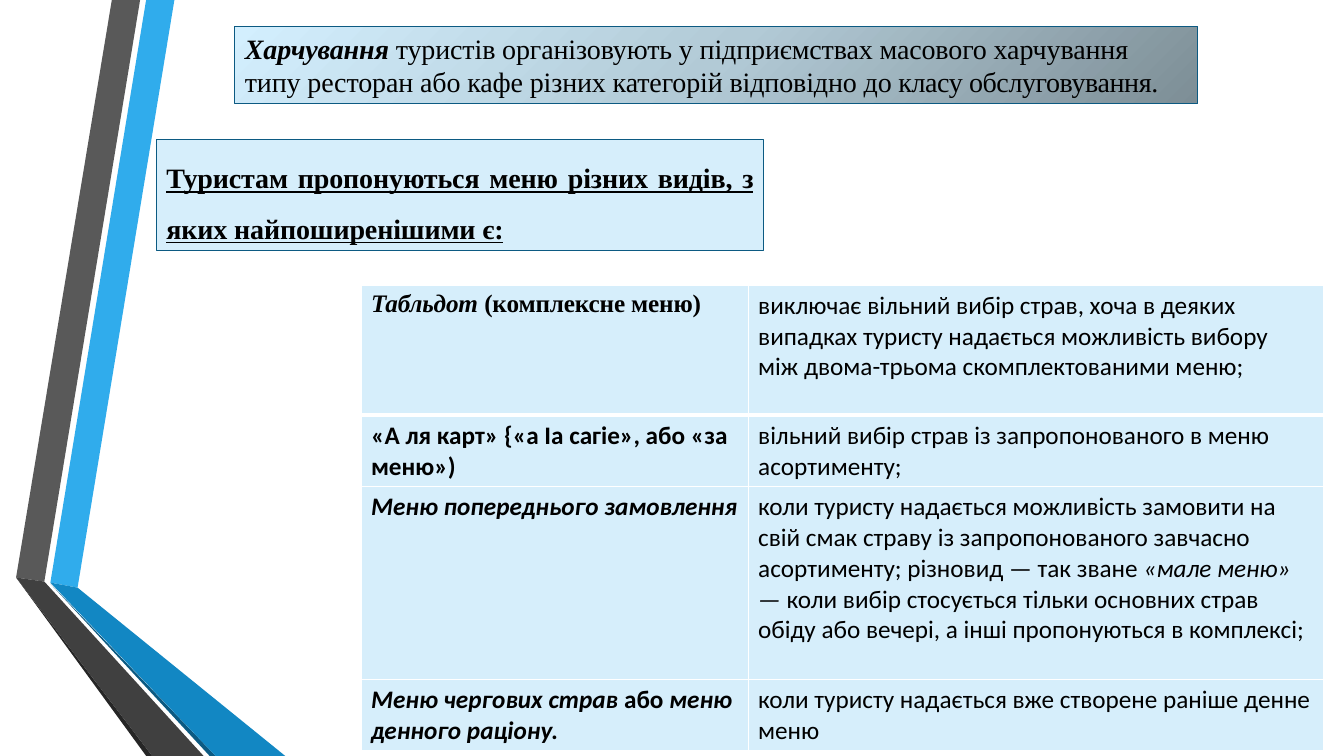
from lxml import etree
from pptx import Presentation
from pptx.dml.color import RGBColor
from pptx.enum.shapes import MSO_SHAPE
from pptx.enum.text import MSO_ANCHOR, PP_ALIGN
from pptx.oxml import parse_xml
from pptx.oxml.ns import qn
from pptx.util import Inches, Pt

RECTANGLE = MSO_SHAPE.RECTANGLE
TOP = MSO_ANCHOR.TOP
LEFT, JUSTIFY = PP_ALIGN.LEFT, PP_ALIGN.JUSTIFY
DRAWING_NS = "http://schemas.openxmlformats.org/drawingml/2006/main"
TITLE_ONLY_LAYOUT = 5
SERIF, SANS = "Times New Roman", "Calibri"

COLORS = {
    "text": "000000", "panel": "D6EEFB", "outline": "0C5A82", "grid": "FFFFFF",
    "blue": "30ACEC", "blue_fold": "1287C3", "blue_edge": "0C5A82",
    "gray": "595959", "gray_fold": "404040", "gray_edge": "262626",
}
INTRO_GRADIENT = [(0, "7D8E96"), (50, "B2CAD6"), (100, "D3EFFE")]

# Ribbon outlines, from back to front
RIBBONS = [
    ("blue", [(0.5, 5.78), (0.77, 5.83), (1.73, 0), (1.45, 0)]),
    ("gray", [(1.39, 0), (1.11, 0), (0.16, 5.73), (0.44, 5.77)]),
    ("gray_edge", [(0.16, 5.73), (1.45, 7.5), (1.51, 7.5)]),
    ("blue_edge", [(0.5, 5.79), (2.08, 7.5), (2.14, 7.5)]),
    ("blue_fold", [(0.5, 5.78), (2.14, 7.5), (2.83, 7.5), (0.77, 5.83)]),
    ("gray_fold", [(2.02, 7.5), (0.44, 5.77), (0.16, 5.73), (1.51, 7.5)]),
]

# Formats of text runs
BOLD = {"bold": True, "italic": False}
BOLD_ITALIC = {"bold": True, "italic": True}
PLAIN = {"bold": False, "italic": False}
ITALIC = {"bold": False, "italic": True}
SERIF_20 = {"name": SERIF, "size": Pt(20)}
SERIF_18 = {"name": SERIF, "size": Pt(18)}
SANS_18 = {"name": SANS, "size": Pt(18)}

# Runs are (text, format, character spacing in hundredths of a point)
INTRO = [
    ("Харчування ", SERIF_20 | BOLD_ITALIC, -10),
    ("туристів організовують у підприємствах масового харчування типу ресторан "
     "або кафе різних категорій відповідно до ", SERIF_20 | PLAIN, -10),
    ("класу обслуговування.", SERIF_20 | PLAIN, -30),
]
HEADING = [("Туристам пропонуються меню різних видів, з яких найпоширенішими є:",
            SERIF_20 | BOLD | {"underline": True}, -10)]
MENU_ROWS = [
    (1.29,
     [("Табльдот ", SERIF_18 | BOLD_ITALIC, -10),
      ("(комплексне меню)", SERIF_18 | BOLD, -10)],
     [("виключає вільний вибір страв, хоча в деяких випадках туристу надається "
       "можливість вибору між двома-трьома скомплектованими меню;", SANS_18 | PLAIN, 0)]),
    (0.7,
     [("«А ля карт» {«а Іа сагіе», або «за меню»)", SANS_18 | BOLD, 0)],
     [("вільний вибір страв із запропонованого в меню асортименту;", SANS_18 | PLAIN, 0)]),
    (1.91,
     [("Меню попереднього замовлення", SANS_18 | BOLD_ITALIC, 0)],
     [("коли туристу надається можливість замовити на свій смак страву із "
       "запропонованого завчасно асортименту; різновид — так зване ", SANS_18 | PLAIN, 0),
      ("«мале меню» — ", SANS_18 | ITALIC, 0),
      ("коли вибір стосується тільки основних страв обіду або вечері, "
       "а інші пропонуються в комплексі;", SANS_18 | PLAIN, 0)]),
    (0.7,
     [("Меню чергових страв ", SANS_18 | BOLD_ITALIC, 0),
      ("або ", SANS_18 | BOLD, 0),
      ("меню денного раціону.", SANS_18 | BOLD_ITALIC, 0)],
     [("коли туристу надається вже створене раніше денне меню", SANS_18 | PLAIN, 0)]),
]


def color(name):
    return RGBColor.from_string(COLORS[name])


def apply_format(target, values):
    for attribute, value in values.items():
        setattr(target, attribute, value)


def write_runs(paragraph, runs):
    for text, font_format, spacing in runs:
        run = paragraph.add_run()
        run.text = text
        apply_format(run.font, font_format)
        run.font.color.rgb = color("text")
        if spacing:
            run.font._element.set("spc", str(spacing))


def style_panel(panel, runs, paragraph_format):
    """Give a panel its outline, fill and one paragraph of text."""
    panel.fill.solid()
    panel.fill.fore_color.rgb = color("panel")
    panel.line.color.rgb = color("outline")
    panel.line.width = Pt(0.75)
    apply_format(panel.text_frame, {"word_wrap": True, "vertical_anchor": TOP})
    paragraph = panel.text_frame.paragraphs[0]
    apply_format(paragraph, paragraph_format)
    write_runs(paragraph, runs)


def add_ribbons(slide):
    for fill_name, points in RIBBONS:
        corners = [(Inches(x), Inches(y)) for x, y in points]
        builder = slide.shapes.build_freeform(*corners[0])
        builder.add_line_segments(corners[1:], close=True)
        ribbon = builder.convert_to_shape()
        ribbon.shadow.inherit = False
        ribbon.fill.solid()
        ribbon.fill.fore_color.rgb = color(fill_name)
        ribbon.line.fill.background()


def add_intro(slide, left, top, width, height):
    intro = slide.shapes.add_shape(
        RECTANGLE, Inches(left), Inches(top), Inches(width), Inches(height))
    intro.shadow.inherit = False
    style_panel(intro, INTRO, {"alignment": LEFT})
    # Radial gradient that spreads from the lower right corner
    stops = "".join(f'<a:gs pos="{position * 1000}"><a:srgbClr val="{shade}"/></a:gs>'
                    for position, shade in INTRO_GRADIENT)
    gradient = parse_xml(
        f'<a:gradFill xmlns:a="{DRAWING_NS}" rotWithShape="1"><a:gsLst>{stops}</a:gsLst>'
        '<a:path path="circle"><a:fillToRect l="100000" t="100000"/></a:path></a:gradFill>')
    properties = intro._element.spPr
    properties.replace(properties.find(qn("a:solidFill")), gradient)


def add_heading(slide, left, top, width, height):
    heading = slide.shapes.title
    apply_format(heading, {"left": Inches(left), "top": Inches(top),
                           "width": Inches(width), "height": Inches(height)})
    style_panel(heading, HEADING, {
        "alignment": JUSTIFY, "line_spacing": 1.5,
        "space_before": Pt(1.8), "space_after": Pt(10)})


def set_borders(cell, widths):
    properties = cell._tc.get_or_add_tcPr()
    for index, (side, width) in enumerate(widths.items()):
        border = etree.Element(qn(f"a:ln{side}"), w=str(Pt(width)))
        fill = etree.SubElement(border, qn("a:solidFill"))
        etree.SubElement(fill, qn("a:srgbClr"), val=COLORS["grid"])
        properties.insert(index, border)


def add_menu_table(slide, left, top, column_widths):
    heights = [row[0] for row in MENU_ROWS]
    table = slide.shapes.add_table(
        len(MENU_ROWS), len(column_widths), Inches(left), Inches(top),
        Inches(sum(column_widths)), Inches(sum(heights))).table
    table.horz_banding = False
    for column, width in zip(table.columns, column_widths):
        column.width = Inches(width)
    for index, (height, *texts) in enumerate(MENU_ROWS):
        table.rows[index].height = Inches(height)
        # A thick rule parts the first row from the rest
        widths = {"L": 1, "R": 1, "T": 3 if index == 1 else 1, "B": 3 if index == 0 else 1}
        for cell, runs in zip(table.rows[index].cells, texts):
            cell.fill.solid()
            cell.fill.fore_color.rgb = color("panel")
            set_borders(cell, widths)
            write_runs(cell.text_frame.paragraphs[0], runs)


def main():
    deck = Presentation()
    deck.slide_width, deck.slide_height = Inches(13.33), Inches(7.5)
    slide = deck.slides.add_slide(deck.slide_layouts[TITLE_ONLY_LAYOUT])
    add_ribbons(slide)
    add_intro(slide, 2.33, 0.26, 9.55, 0.77)
    add_heading(slide, 1.55, 1.38, 6.02, 1.11)
    add_menu_table(slide, 3.58, 2.83, [3.84, 5.71])
    deck.save("out.pptx")


if __name__ == "__main__":
    main()
